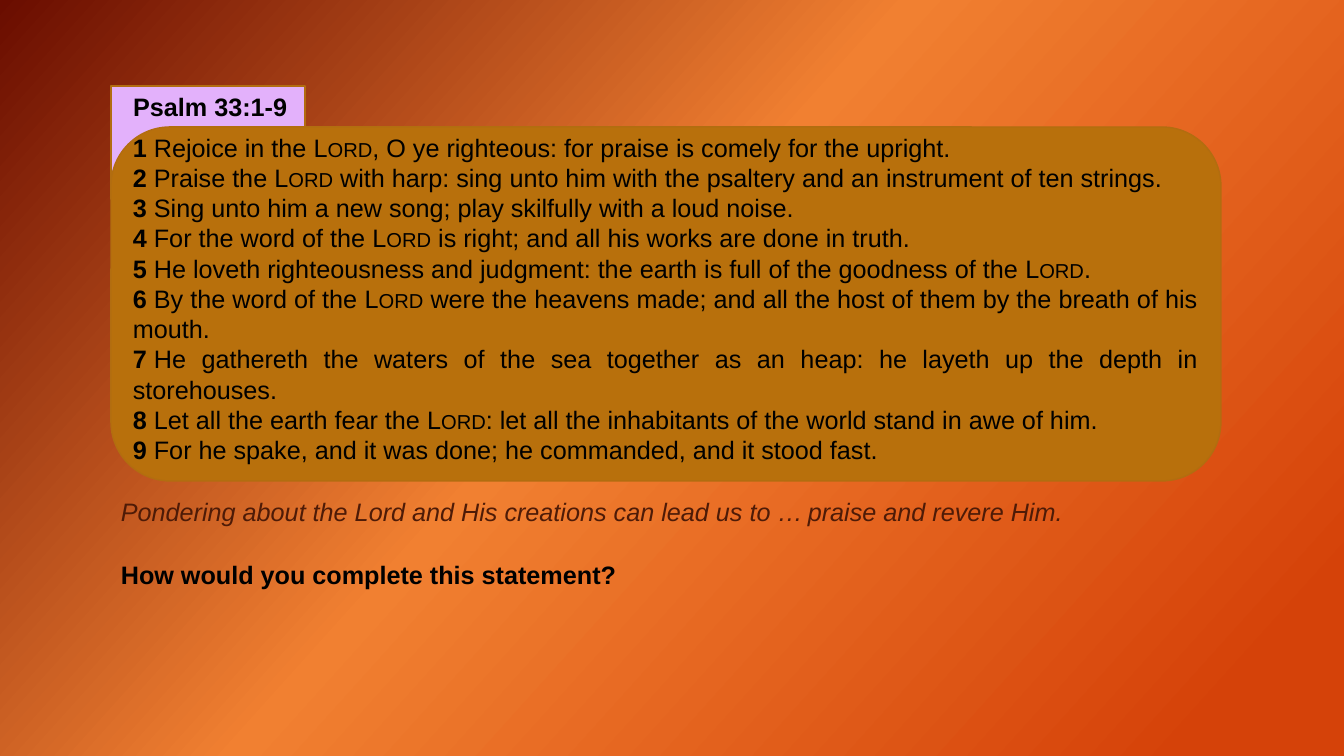
from lxml import etree
from pptx import Presentation
from pptx import util as u
from pptx.dml.color import RGBColor
from pptx.enum import shapes, text
from pptx.oxml.ns import qn

PX = 914400 / 100.8
BLACK = RGBColor(0x00, 0x00, 0x00)
LILAC = RGBColor(0xE3, 0xB1, 0xFB)
OCHRE = RGBColor(0xB8, 0x70, 0x0C)
OCHRE_EDGE = RGBColor(0xB2, 0x6D, 0x10)
MAROON = RGBColor(0x4E, 0x1B, 0x07)
BACKDROP = [
    (0, RGBColor(0x6A, 0x0D, 0x00)),
    (45, RGBColor(0xF1, 0x80, 0x31)),
    (92, RGBColor(0xD5, 0x42, 0x09)),
]
BACKDROP_ANGLE = 42
DIVINE_NAME = "Lord"
FIXED_SPACE = chr(160)  # keeps its width in justified lines

VERSES = [
    "Rejoice in the Lord, O ye righteous: for praise is comely for the upright.",
    "Praise the Lord with harp: sing unto him with the psaltery and an instrument of ten strings.",
    "Sing unto him a new song; play skilfully with a loud noise.",
    "For the word of the Lord is right; and all his works are done in truth.",
    "He loveth righteousness and judgment: the earth is full of the goodness of the Lord.",
    "By the word of the Lord were the heavens made; and all the host of them by the breath of his mouth.",
    "He gathereth the waters of the sea together as an heap: he layeth up the depth in storehouses.",
    "Let all the earth fear the Lord: let all the inhabitants of the world stand in awe of him.",
    "For he spake, and it was done; he commanded, and it stood fast.",
]


def px(*lengths):
    return [u.Emu(round(length * PX)) for length in lengths]


def add_run(paragraph, words, color=BLACK, bold=False, italic=False, small_caps=False):
    run = paragraph.add_run()
    run.text = words
    font = run.font
    font.name, font.size = "Arial", u.Pt(18)
    font.bold, font.italic = bold, italic
    font.color.rgb = color
    if small_caps:
        font._element.set("cap", "small")


class PsalmSlide:
    def __init__(self, prs):
        self.slide = prs.slides.add_slide(prs.slide_layouts[5])
        self.shapes = self.slide.shapes

    def backdrop(self, stops, angle):
        fill = self.slide.background.fill
        fill.gradient()
        fill.gradient_angle = 360 - angle
        stop_list = fill._fill._gradFill.find(qn("a:gsLst"))
        for stop in list(stop_list):
            stop_list.remove(stop)
        for percent, color in stops:
            stop = etree.SubElement(stop_list, qn("a:gs"), pos=str(percent * 1000))
            etree.SubElement(stop, qn("a:srgbClr"), val=str(color))

    def panel(self, kind, box, color):
        panel = self.shapes.add_shape(kind, *px(*box))
        panel.shadow.inherit = False
        panel.fill.solid()
        panel.fill.fore_color.rgb = color
        panel.line.color.rgb = OCHRE_EDGE
        panel.line.width = u.Pt(1)

    def frame(self, holder, wrap):
        """Set up the text frame of a text box or placeholder and return it."""
        frame = holder.text_frame
        frame.word_wrap = wrap
        frame.auto_size = text.MSO_AUTO_SIZE.SHAPE_TO_FIT_TEXT
        frame.vertical_anchor = text.MSO_ANCHOR.TOP
        return frame

    def title(self, words, box):
        title = self.shapes.title
        title.left, title.top, title.width, title.height = px(*box)
        paragraph = self.frame(title, wrap=False).paragraphs[0]
        paragraph.alignment = text.PP_ALIGN.LEFT
        add_run(paragraph, words, bold=True)
        self.shapes._spTree.append(title._element)  # bring in front of its tab

    def line(self, words, box, wrap=False, **style):
        holder = self.shapes.add_textbox(*px(*box))
        add_run(self.frame(holder, wrap).paragraphs[0], words, **style)

    def verses(self, verses, box):
        frame = self.frame(self.shapes.add_textbox(*px(*box)), wrap=True)
        for number, verse in enumerate(verses, 1):
            paragraph = frame.paragraphs[0] if number == 1 else frame.add_paragraph()
            paragraph.alignment = text.PP_ALIGN.JUSTIFY
            add_run(paragraph, f"{number}{FIXED_SPACE}", bold=True)
            before, name, after = verse.partition(DIVINE_NAME)
            add_run(paragraph, before)
            if name:
                add_run(paragraph, name, small_caps=True)
                add_run(paragraph, after)


def main():
    prs = Presentation()
    prs.slide_width, prs.slide_height = px(1344, 756)
    psalm = PsalmSlide(prs)
    psalm.backdrop(BACKDROP, BACKDROP_ANGLE)
    psalm.panel(shapes.MSO_SHAPE.RECTANGLE, (111, 86, 194, 113), LILAC)
    psalm.panel(shapes.MSO_SHAPE.ROUNDED_RECTANGLE, (111, 127, 1110, 354), OCHRE)
    psalm.title("Psalm 33:1-9" + FIXED_SPACE, (123, 86, 182, 40))
    psalm.verses(VERSES, (123, 127, 1085, 346))
    psalm.line("Pondering about the Lord and His creations can lead us to …",
               (111, 491, 715, 40), wrap=True, color=MAROON, italic=True)
    psalm.line("How would you complete this statement?", (111, 554, 521, 40), bold=True)
    psalm.line("praise and revere Him." + FIXED_SPACE, (798, 491, 284, 40),
               color=MAROON, italic=True)
    prs.save("out.pptx")


if __name__ == "__main__":
    main()
